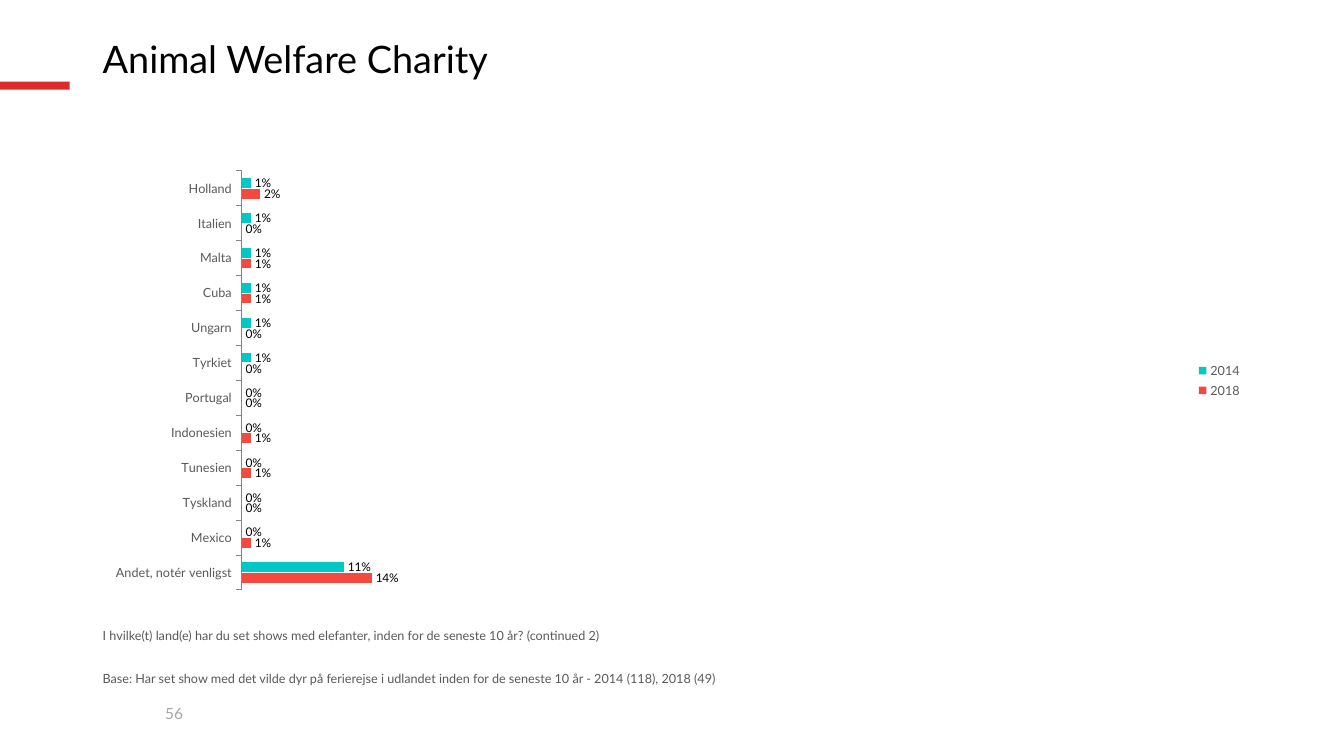
from pptx import Presentation
from pptx.chart.data import CategoryChartData
from pptx.dml.color import RGBColor
from pptx.enum.chart import XL_CHART_TYPE, XL_LABEL_POSITION, XL_LEGEND_POSITION
from pptx.enum.chart import XL_TICK_LABEL_POSITION, XL_TICK_MARK
from pptx.enum.shapes import MSO_SHAPE
from pptx.enum.text import MSO_ANCHOR
from pptx.util import Inches, Pt

BAR_CLUSTERED = XL_CHART_TYPE.BAR_CLUSTERED
OUTSIDE_END = XL_LABEL_POSITION.OUTSIDE_END
LEGEND_RIGHT = XL_LEGEND_POSITION.RIGHT
LABELS_LOW = XL_TICK_LABEL_POSITION.LOW
TICK_OUT = XL_TICK_MARK.OUTSIDE
RECTANGLE = MSO_SHAPE.RECTANGLE
TOP, MIDDLE = MSO_ANCHOR.TOP, MSO_ANCHOR.MIDDLE

BLACK = RGBColor(0x00, 0x00, 0x00)
GREY = RGBColor(0x59, 0x59, 0x59)
PALE_GREY = RGBColor(0xA6, 0xA6, 0xA6)
AXIS_GREY = RGBColor(0x86, 0x86, 0x86)
ACCENT = RGBColor(0xDA, 0x2C, 0x2D)
RED = RGBColor(0xF3, 0x49, 0x3E)
TEAL = RGBColor(0x02, 0xC8, 0xC5)

FONT = "Lato"
SLIDE_W, SLIDE_H = 13.33, 7.5
MARGIN, CONTENT_W = 0.92, 11.5

COUNTRIES = ["Andet, notér venligst", "Mexico", "Tyskland", "Tunesien",
             "Indonesien", "Portugal", "Tyrkiet", "Ungarn", "Cuba", "Malta",
             "Italien", "Holland"]
SERIES = [
    ("2018", RED, [0.14, 0.01, 0, 0.01, 0.01, 0, 0, 0, 0.01, 0.01, 0, 0.02]),
    ("2014", TEAL, [0.11, 0, 0, 0, 0, 0] + [0.01] * 6),
]


def style_font(font, size, color):
    """Set typeface, size and colour."""
    font.name = FONT
    font.size = Pt(size)
    font.color.rgb = color


def add_text(s, text, top, height, size, color, left=MARGIN, width=CONTENT_W,
             anchor=TOP, line_spacing=None):
    """Add a one-line text box."""
    box = s.shapes.add_textbox(*map(Inches, (left, top, width, height)))
    tf = box.text_frame
    tf.word_wrap = True
    tf.vertical_anchor = anchor
    p = tf.paragraphs[0]
    p.line_spacing = line_spacing
    r = p.add_run()
    r.text = text
    style_font(r.font, size, color)


def add_accent(s):
    """Add the short bar at the left edge."""
    sp = s.shapes.add_shape(RECTANGLE, 0, Inches(0.81), Inches(0.69), Inches(0.08))
    sp.shadow.inherit = False
    sp.fill.solid()
    sp.fill.fore_color.rgb = ACCENT
    sp.line.fill.background()


def style_axes(chart):
    """Show the country axis and hide the percentage axis."""
    countries, shares = chart.category_axis, chart.value_axis
    countries.tick_label_position = LABELS_LOW
    countries.major_tick_mark = TICK_OUT
    countries.has_major_gridlines = False
    countries.format.line.color.rgb = AXIS_GREY
    style_font(countries.tick_labels.font, 9, GREY)
    shares.minimum_scale, shares.maximum_scale = 0, 1
    shares.major_unit = 0.1
    shares.has_major_gridlines = False
    shares.visible = False


def style_series(series, color):
    """Colour one year's bars and label them."""
    series.format.fill.solid()
    series.format.fill.fore_color.rgb = color
    series.invert_if_negative = False
    labels = series.data_labels
    labels.show_value = True
    labels.number_format = "0%"
    labels.number_format_is_linked = False
    labels.position = OUTSIDE_END
    style_font(labels.font, 8.5, BLACK)


def add_country_chart(s, top, height):
    """Add the clustered bars by country and year."""
    data = CategoryChartData(number_format="0.00%")
    data.categories = COUNTRIES
    for name, _, values in SERIES:
        data.add_series(name, values)
    place = map(Inches, (MARGIN, top, CONTENT_W, height))
    chart = s.shapes.add_chart(BAR_CLUSTERED, *place, data).chart
    style_font(chart.font, 18, BLACK)
    chart.has_title = False
    chart.has_legend = True
    chart.legend.position = LEGEND_RIGHT
    chart.legend.include_in_layout = False
    style_font(chart.legend.font, 9, GREY)
    style_axes(chart)
    plot = chart.plots[0]
    plot.gap_width, plot.overlap = 150, -10
    plot.vary_by_categories = False
    for series, (_, color, _) in zip(plot.series, SERIES):
        style_series(series, color)


def main():
    """Build and save the slide."""
    prs = Presentation()
    prs.slide_width, prs.slide_height = Inches(SLIDE_W), Inches(SLIDE_H)
    s = prs.slides.add_slide(prs.slide_layouts[6])
    add_accent(s)
    add_text(s, "Animal Welfare Charity", 0.35, 0.51, 27, BLACK,
             anchor=MIDDLE, line_spacing=0.9)
    add_country_chart(s, 1.61, 4.33)
    add_text(s, "I hvilke(t) land(e) har du set shows med elefanter, "
             "inden for de seneste 10 år? (continued 2)", 6.18, 0.43, 9, GREY)
    add_text(s, "Base: Har set show med det vilde dyr på ferierejse i udlandet "
             "inden for de seneste 10 år - 2014 (118), 2018 (49)",
             6.61, 0.28, 9, GREY)
    add_text(s, "56", 6.94, 0.29, 11, PALE_GREY, left=1.54, width=0.68)
    prs.save("out.pptx")


if __name__ == "__main__":
    main()
